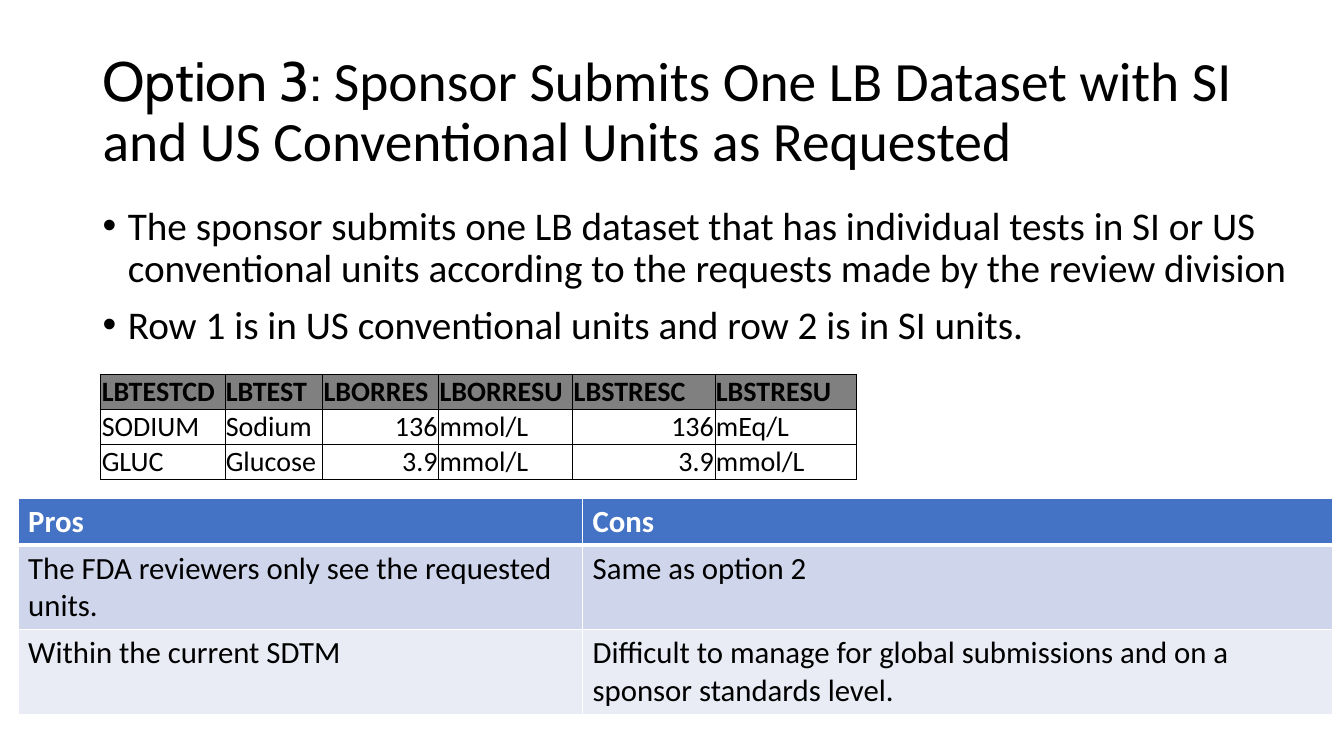
"""Build the Option 3 slide: title, bullets, lab data table and pros/cons table."""
from lxml import etree
from pptx import Presentation
from pptx import util as u
from pptx.dml.color import RGBColor
from pptx.enum import text
from pptx.oxml.ns import qn

COLORS = {"black": "000000", "white": "FFFFFF", "gray": "808080",
          "blue": "4472C4", "band1": "CFD5EA", "band2": "E9EBF5"}

prs = Presentation()
prs.slide_width, prs.slide_height = u.Inches(13.33), u.Inches(7.5)
COL, ROW = prs.slide_width / 100, prs.slide_height / 100
s = prs.slides.add_slide(prs.slide_layouts[6])


def style(p, size, color="black", bold=False):
    for r in p.runs:
        r.font.name, r.font.size, r.font.bold = "Calibri", u.Pt(size), bold
        r.font.color.rgb = RGBColor.from_string(COLORS[color])


def border(cell, color, widths):
    tcPr = cell._tc.get_or_add_tcPr()
    for i, (side, width) in enumerate(zip("LRTB", widths)):
        ln = etree.Element(qn(f"a:ln{side}"), w=str(u.Pt(width)))
        fill = etree.SubElement(ln, qn("a:solidFill"))
        etree.SubElement(fill, qn("a:srgbClr"), val=COLORS[color])
        tcPr.insert(i, ln)


title = s.shapes.add_textbox(int(6.9 * COL), int(5.33 * ROW), int(86.27 * COL), int(19.33 * ROW))
tf = title.text_frame
tf.word_wrap = True
tf.vertical_anchor = text.MSO_ANCHOR.MIDDLE
p = tf.paragraphs[0]
p.line_spacing = 0.9
for part in ("Option 3:", " Sponsor Submits One LB Dataset with SI and US Conventional Units as Requested"):
    p.add_run().text = part
style(p, 39.6)
p.runs[0].font.name = "Cabin"

body = s.shapes.add_textbox(int(6.9 * COL), int(26.67 * ROW), int(90.85 * COL), int(63.47 * ROW))
tf = body.text_frame
tf.word_wrap = True
tf.text = ("The sponsor submits one LB dataset that has individual tests in SI or US "
           "conventional units according to the requests made by the review division\n"
           "Row 1 is in US conventional units and row 2 is in SI units.")
for p in tf.paragraphs:
    p.line_spacing, p.space_before = 0.9, u.Pt(10)
    style(p, 28)
    pPr = p._p.get_or_add_pPr()
    pPr.set("marL", str(u.Inches(0.25)))
    pPr.set("indent", str(u.Inches(-0.25)))
    etree.SubElement(pPr, qn("a:buFont"), typeface="Arial")
    etree.SubElement(pPr, qn("a:buChar"), char="•")

pros_cons = [("Pros", "Cons"),
             ("The FDA reviewers only see the requested units.", "Same as option 2"),
             ("Within the current SDTM",
              "Difficult to manage for global submissions and on a sponsor standards level.")]
labs = [("LBTESTCD", "LBTEST", "LBORRES", "LBORRESU", "LBSTRESC", "LBSTRESU"),
        ("SODIUM", "Sodium", "136", "mmol/L", "136", "mEq/L"),
        ("GLUC", "Glucose", "3.9", "mmol/L", "3.9", "mmol/L")]
tables = [
    (pros_cons, 1.35, 65.87, (42, 55.81), (6.2, 11.2, 11.2), 22, "white",
     ("blue", "band1", "band2"), "white", ((1, 1, 1, 3), (1, 1, 3, 1), (1, 1, 1, 1))),
    (labs, 7.5, 49.47, (9.23, 7.28, 8.63, 9.98, 10.58, 10.5), (4.65,) * 3, 20, "black",
     ("gray", None, None), "black", ((0.5,) * 4,) * 3),
]
for data, left, top, cols, rows, size, head, fills, line, widths in tables:
    frame = s.shapes.add_table(len(rows), len(cols), int(left * COL), int(top * ROW),
                               int(sum(cols) * COL), int(sum(rows) * ROW))
    table = frame.table
    for column, width in zip(table.columns, cols):
        column.width = int(width * COL)
    for i, values in enumerate(data):
        table.rows[i].height = int(rows[i] * ROW)
        for cell, value in zip(table.rows[i].cells, values):
            cell.text = value
            p = cell.text_frame.paragraphs[0]
            style(p, size, "black" if i else head, i == 0)
            if fills[i]:
                cell.fill.solid()
                cell.fill.fore_color.rgb = RGBColor.from_string(COLORS[fills[i]])
            else:
                cell.fill.background()
            border(cell, line, widths[i])
            if data is labs:
                cell.vertical_anchor = text.MSO_ANCHOR.BOTTOM
                cell.margin_left = cell.margin_right = cell.margin_top = u.Inches(0.01)
                cell.margin_bottom = 0
                if value[0].isdigit():
                    p.alignment = text.PP_ALIGN.RIGHT

prs.save("out.pptx")
